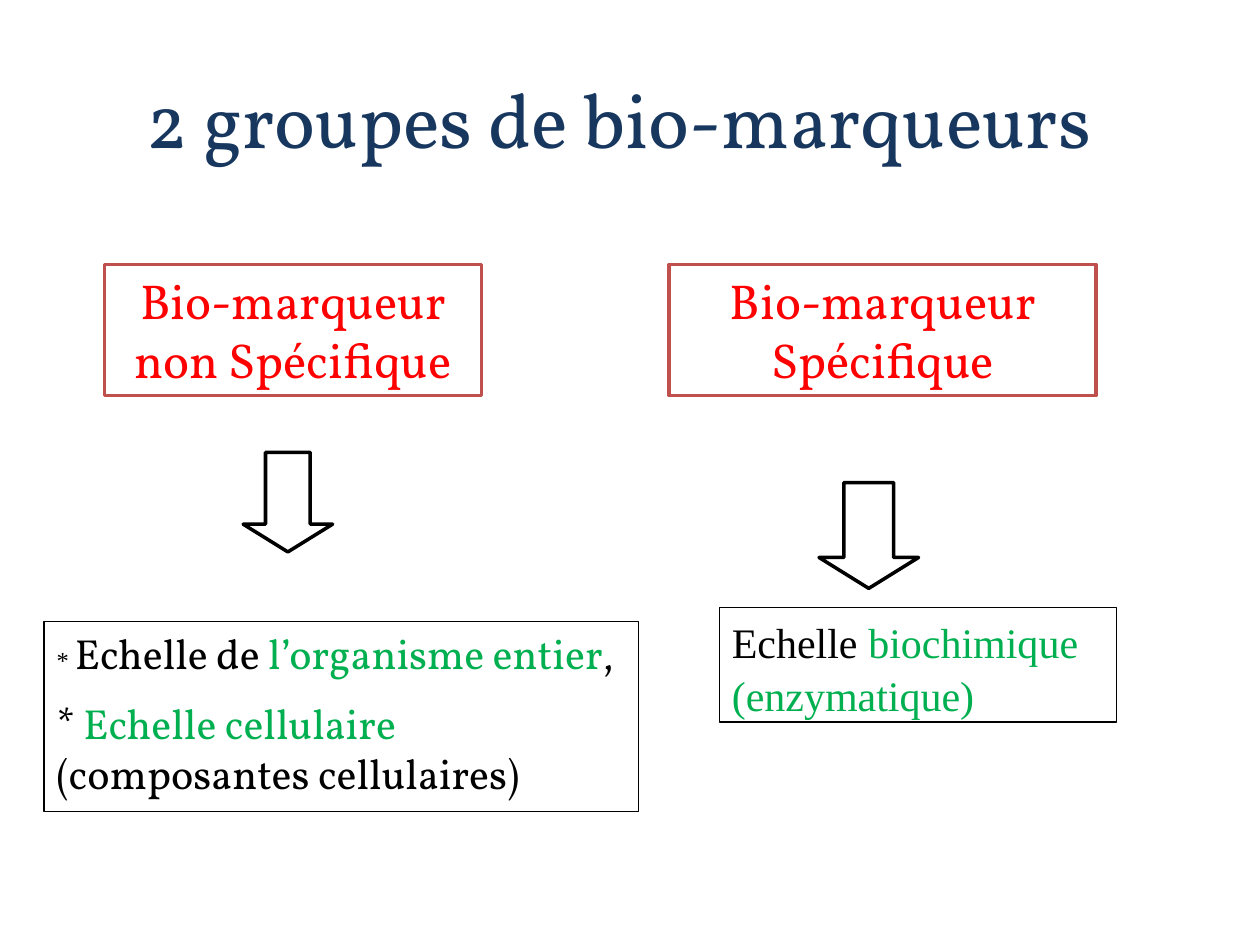
from pptx import Presentation
from pptx.dml.color import RGBColor
from pptx.enum.shapes import MSO_SHAPE as Preset
from pptx.enum.text import MSO_ANCHOR as Anchor, MSO_AUTO_SIZE as AutoSize, PP_ALIGN as Align
from pptx.util import Inches, Pt

SERIF, TIMES = "Vollkorn", "Times New Roman"
NAVY, BRICK, RED, GREEN = "17375E", "C0504D", "FF0000", "00B050"
BLACK, WHITE = "000000", "FFFFFF"
COLUMNS, ROWS = 100, 75


def color(value):
    return RGBColor.from_string(value)


class SlideBuilder:
    def __init__(self, presentation):
        self.slide = presentation.slides.add_slide(presentation.slide_layouts[5])
        self.column = presentation.slide_width / COLUMNS
        self.row = presentation.slide_height / ROWS

    def place(self, column, row, columns, rows):
        return (round(column * self.column), round(row * self.row),
                round(columns * self.column), round(rows * self.row))

    def format_run(self, run, size, font, value):
        run.font.size = Pt(size)
        run.font.name = font
        run.font.color.rgb = color(value)

    def title(self, area, text):
        shape = self.slide.shapes.title
        shape.left, shape.top, shape.width, shape.height = self.place(*area)
        frame = shape.text_frame
        frame.text = text
        frame.word_wrap = True
        frame.auto_size = AutoSize.NONE
        frame.vertical_anchor = Anchor.TOP
        frame.paragraphs[0].alignment = Align.CENTER
        self.format_run(frame.paragraphs[0].runs[0], 44, SERIF, NAVY)

    def preset(self, kind, area, line, width, fill=None):
        shape = self.slide.shapes.add_shape(kind, *self.place(*area))
        shape.shadow.inherit = False
        if fill:
            shape.fill.solid()
            shape.fill.fore_color.rgb = color(fill)
        else:
            shape.fill.background()
        shape.line.color.rgb = color(line)
        shape.line.width = Pt(width)
        return shape

    def heading(self, area, text):
        shape = self.preset(Preset.RECTANGLE, area, BRICK, 2, WHITE)
        frame = shape.text_frame
        frame.text = text
        frame.word_wrap = True
        frame.vertical_anchor = Anchor.TOP
        frame.paragraphs[0].alignment = Align.CENTER
        self.format_run(frame.paragraphs[0].runs[0], 28, SERIF, RED)

    def arrow(self, area):
        shape = self.preset(Preset.DOWN_ARROW, area, BLACK, 2, WHITE)
        shape.adjustments[0] = 0.5
        shape.adjustments[1] = 0.31

    def details(self, area, paragraphs, line_spacing=1.0):
        shape = self.preset(Preset.RECTANGLE, area, BLACK, 0.75)
        frame = shape.text_frame
        frame.word_wrap = True
        frame.vertical_anchor = Anchor.TOP
        for index, runs in enumerate(paragraphs):
            paragraph = frame.add_paragraph() if index else frame.paragraphs[0]
            paragraph.alignment = Align.LEFT
            paragraph.line_spacing = line_spacing
            paragraph.space_before = Pt(11 if index else 0)
            for text, size, font, value in runs:
                run = paragraph.add_run()
                run.text = text
                self.format_run(run, size, font, value)


def main():
    presentation = Presentation()
    presentation.slide_width, presentation.slide_height = Inches(10), Inches(7.5)
    builder = SlideBuilder(presentation)

    builder.title((9.8, 5.2, 78.7, 13.1), "2 groupes de bio-marqueurs")
    builder.heading((8.3, 21, 29.9, 10.4), "Bio-marqueur non Spécifique")
    builder.heading((53.1, 21, 33.9, 10.4), "Bio-marqueur Spécifique")
    builder.details((3.5, 49.3, 47.2, 15.1), [
        [("* ", 14, TIMES, BLACK),
         ("Echelle de ", 24, SERIF, BLACK),
         ("l’organisme entier", 24, SERIF, GREEN),
         (",", 24, SERIF, BLACK)],
        [("* ", 24, SERIF, BLACK),
         ("Echelle cellulaire ", 24, SERIF, GREEN),
         ("(composantes cellulaires)", 24, SERIF, BLACK)],
    ])
    builder.arrow((19.3, 35.9, 7.1, 7.9))
    builder.details((57.1, 48.2, 31.5, 9.1), [
        [("Echelle ", 24, TIMES, BLACK),
         ("biochimique (enzymatique)", 24, TIMES, GREEN)],
    ], line_spacing=1.06)
    builder.arrow((65, 38.3, 7.9, 8.4))

    presentation.save("out.pptx")


if __name__ == "__main__":
    main()
